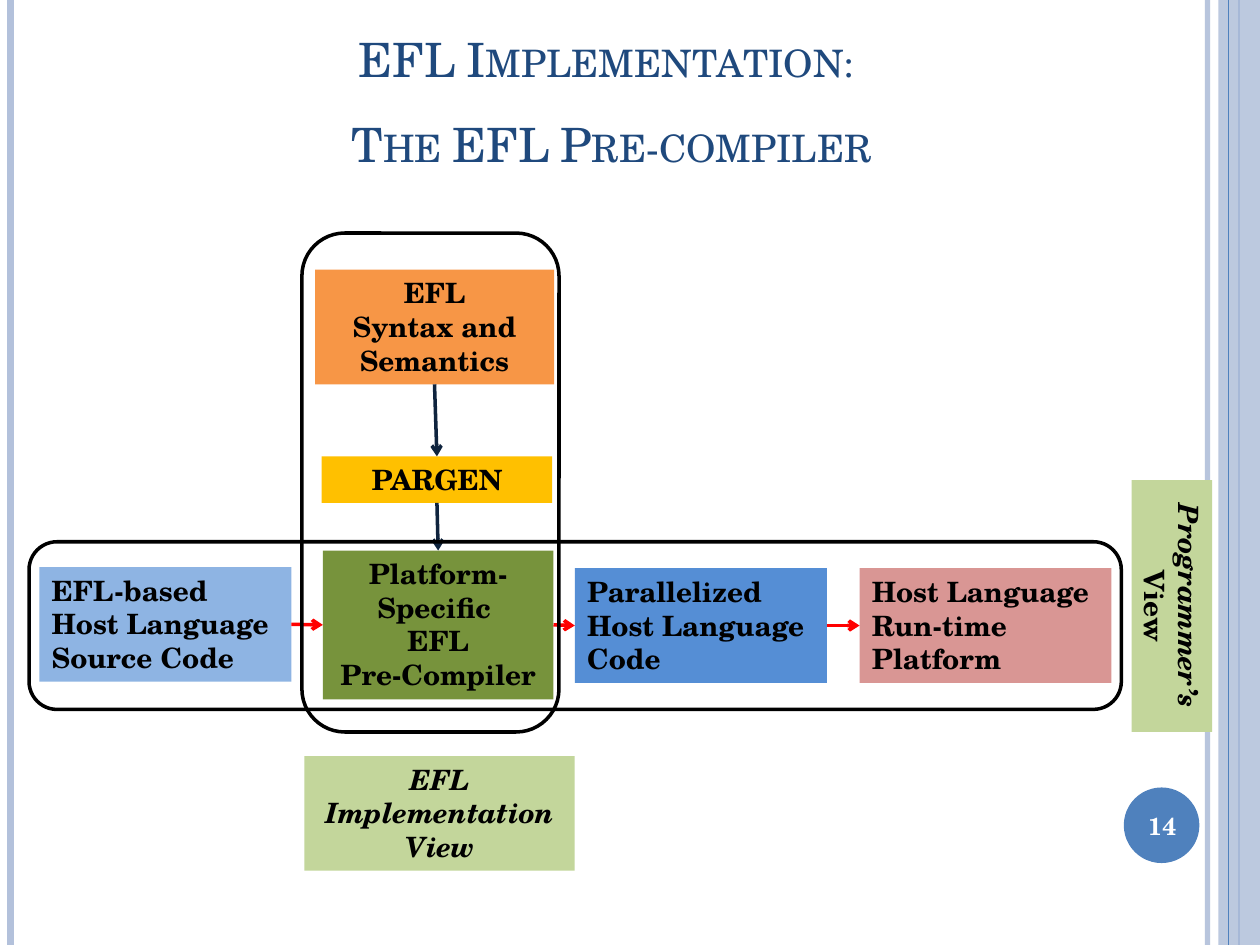
from dataclasses import dataclass

from lxml import etree
from pptx import Presentation
from pptx.dml.color import RGBColor
from pptx.enum.shapes import MSO_CONNECTOR, MSO_SHAPE
from pptx.enum.text import MSO_ANCHOR, MSO_AUTO_SIZE, PP_ALIGN
from pptx.oxml.ns import qn
from pptx.util import Pt

STRAIGHT = MSO_CONNECTOR.STRAIGHT
RECTANGLE, ROUNDED, OVAL = MSO_SHAPE.RECTANGLE, MSO_SHAPE.ROUNDED_RECTANGLE, MSO_SHAPE.OVAL
TOP, MIDDLE, BOTTOM = MSO_ANCHOR.TOP, MSO_ANCHOR.MIDDLE, MSO_ANCHOR.BOTTOM
LEFT, CENTER = PP_ALIGN.LEFT, PP_ALIGN.CENTER
GROW, NO_FIT = MSO_AUTO_SIZE.SHAPE_TO_FIT_TEXT, MSO_AUTO_SIZE.NONE
TOP_SITE, LEFT_SITE, BOTTOM_SITE, RIGHT_SITE = range(4)
SLIDE_WIDTH, SLIDE_HEIGHT = 720, 540


@dataclass(frozen=True)
class Theme:
    font: str = "TeX Gyre Schola"
    title_size: float = 27
    label_size: float = 16
    number_size: float = 14
    title: str = "1F497D"
    text: str = "000000"
    white: str = "FFFFFF"
    accent: str = "4F81BD"
    border: str = "B3C1DB"
    view: str = "C3D69B"
    flow: str = "FF0000"
    build: str = "0F243E"


@dataclass(frozen=True)
class Rule:
    x: float
    color: str
    weight: float
    opacity: int = 100


@dataclass(frozen=True)
class Frame:
    left: float
    top: float
    width: float
    height: float
    rotation: float = 0


@dataclass(frozen=True)
class Box:
    name: str
    frame: Frame
    fill: str
    text: str
    align: PP_ALIGN = CENTER
    italic: bool = False
    upright_tail: str = ""


@dataclass(frozen=True)
class Arrow:
    start: str
    end: str
    color: str
    start_site: int
    end_site: int


THEME = Theme()
RULES_BEHIND_BAND = [
    Rule(690, THEME.border, 3, 93),
    Rule(6, THEME.border, 4.5),
    Rule(708, THEME.accent, 1.5),
]
RULE_ON_BAND = Rule(702, THEME.accent, 0.75)
BAND = Frame(696.2, 0, 23.8, SLIDE_HEIGHT)
BADGE = Frame(642.2, 450, 43.2, 43.2)
NUMBER = Frame(640.1, 451.4, 48.2, 41)
TITLE = Frame(34.6, 12.6, 630, 89.3)
VIEW_OUTLINES = [Frame(16.6, 309.6, 624.2, 95.8), Frame(103.4, 202.3, 285.1, 146.9, 90)]
BOXES = [
    Box("source", Frame(22.5, 324, 144, 65.5), "8EB4E3",
        "EFL-based\nHost Language\nSource Code", LEFT),
    Box("compiler", Frame(184.5, 314.6, 131.8, 85), "77933C",
        "Platform-Specific \nEFL\nPre-Compiler"),
    Box("parallel", Frame(328.5, 324.7, 144, 65.5), "558ED5",
        "Parallelized\nHost Language\nCode", LEFT),
    Box("platform", Frame(491.2, 324.7, 144, 65.5), "D99694",
        "Host Language\nRun-time Platform", LEFT),
    Box("programmer", Frame(597.6, 323.3, 144, 46.1, 90), THEME.view,
        "Programmer’s", italic=True, upright_tail=" View"),
    Box("generator", Frame(183.8, 260.8, 131.8, 26.6), "FFC000", "PARGEN"),
    Box("syntax", Frame(180, 154.1, 136.6, 65.5), "F79646", "EFL\nSyntax and Semantics"),
    Box("implementation", Frame(174, 432, 154.5, 65.5), THEME.view,
        "EFL Implementation View", italic=True),
]
ARROWS = [
    Arrow("source", "compiler", THEME.flow, RIGHT_SITE, LEFT_SITE),
    Arrow("compiler", "parallel", THEME.flow, RIGHT_SITE, LEFT_SITE),
    Arrow("parallel", "platform", THEME.flow, RIGHT_SITE, LEFT_SITE),
    Arrow("syntax", "generator", THEME.build, BOTTOM_SITE, TOP_SITE),
    Arrow("generator", "compiler", THEME.build, BOTTOM_SITE, TOP_SITE),
]


def lengths(frame: Frame) -> list:
    """Return left, top, width and height of a frame."""
    return [Pt(value) for value in (frame.left, frame.top, frame.width, frame.height)]


def set_opacity(shape, percent: int) -> None:
    """Make the colour of a shape partly transparent."""
    color = next(shape._element.spPr.iter(qn("a:srgbClr")))
    etree.SubElement(color, qn("a:alpha"), val=str(percent * 1000))


def add_line(slide, color: str, weight: float, x: float = 0):
    """Add a full-height straight line without shadow."""
    line = slide.shapes.add_connector(STRAIGHT, Pt(x), Pt(0), Pt(x), Pt(SLIDE_HEIGHT))
    line.line.color.rgb = RGBColor.from_string(color)
    line.line.width = Pt(weight)
    etree.SubElement(line._element.spPr, qn("a:effectLst"))
    return line


def add_rule(slide, rule: Rule) -> None:
    """Add one vertical rule of the slide border."""
    line = add_line(slide, rule.color, rule.weight, rule.x)
    if rule.opacity < 100:
        set_opacity(line, rule.opacity)


def add_filled(slide, kind: MSO_SHAPE, frame: Frame, color: str):
    """Add a filled preset shape without outline."""
    shape = slide.shapes.add_shape(kind, *lengths(frame))
    shape.rotation = frame.rotation
    shape.shadow.inherit = False
    shape.fill.solid()
    shape.fill.fore_color.rgb = RGBColor.from_string(color)
    shape.line.fill.background()
    return shape


def add_view_outline(slide, frame: Frame) -> None:
    """Add a rounded outline around one view."""
    shape = slide.shapes.add_shape(ROUNDED, *lengths(frame))
    shape.rotation = frame.rotation
    shape.shadow.inherit = False
    shape.fill.background()
    shape.line.color.rgb = RGBColor.from_string(THEME.text)
    shape.line.width = Pt(2)


def format_text(shape, size: float, color: str, align: PP_ALIGN, anchor: MSO_ANCHOR,
                bold: bool = True, italic: bool = False) -> None:
    """Format every paragraph and run of a shape."""
    shape.text_frame.word_wrap = True
    shape.text_frame.vertical_anchor = anchor
    for paragraph in shape.text_frame.paragraphs:
        paragraph.alignment = align
        for run in paragraph.runs:
            run.font.name = THEME.font
            run.font.size = Pt(size)
            run.font.color.rgb = RGBColor.from_string(color)
            run.font.bold = bold
            run.font.italic = italic


def add_box(slide, box: Box):
    """Add one labelled box."""
    shape = add_filled(slide, RECTANGLE, box.frame, box.fill)
    shape.text_frame.text = box.text
    if box.upright_tail:
        shape.text_frame.paragraphs[0].add_run().text = box.upright_tail
    format_text(shape, THEME.label_size, THEME.text, box.align, TOP, italic=box.italic)
    if box.upright_tail:
        shape.text_frame.paragraphs[0].runs[-1].font.italic = False
    shape.text_frame.auto_size = GROW
    return shape


def add_arrow(slide, arrow: Arrow, shapes: dict) -> None:
    """Connect two boxes with an arrow."""
    line = add_line(slide, arrow.color, 2)
    line.begin_connect(shapes[arrow.start], arrow.start_site)
    line.end_connect(shapes[arrow.end], arrow.end_site)
    etree.SubElement(line.line._get_or_add_ln(), qn("a:tailEnd"), type="arrow")


def add_border(slide) -> None:
    """Add the side rules, the band and the slide number."""
    for rule in RULES_BEHIND_BAND:
        add_rule(slide, rule)
    set_opacity(add_filled(slide, RECTANGLE, BAND, THEME.border), 87)
    add_rule(slide, RULE_ON_BAND)
    add_filled(slide, OVAL, BADGE, THEME.accent)
    number = slide.shapes.add_textbox(*lengths(NUMBER))
    number.text_frame.text = "14"
    format_text(number, THEME.number_size, THEME.white, CENTER, MIDDLE)


def set_title(slide) -> None:
    """Fill and format the title placeholder."""
    title = slide.shapes.title
    title.left, title.top, title.width, title.height = lengths(TITLE)
    title.text_frame.text = "EFL Implementation: \nThe EFL Pre-compiler"
    title.text_frame.auto_size = NO_FIT
    format_text(title, THEME.title_size, THEME.title, CENTER, BOTTOM, bold=False)
    for paragraph in title.text_frame.paragraphs:
        paragraph.line_spacing = 1.5
        for run in paragraph.runs:
            run.font._element.set("cap", "small")


def main() -> None:
    """Build and save the slide."""
    presentation = Presentation()
    presentation.slide_width, presentation.slide_height = Pt(SLIDE_WIDTH), Pt(SLIDE_HEIGHT)
    slide = presentation.slides.add_slide(presentation.slide_layouts[5])
    add_border(slide)
    set_title(slide)
    shapes = {box.name: add_box(slide, box) for box in BOXES}
    for arrow in ARROWS:
        add_arrow(slide, arrow, shapes)
    for frame in VIEW_OUTLINES:
        add_view_outline(slide, frame)
    presentation.save("out.pptx")


if __name__ == "__main__":
    main()
